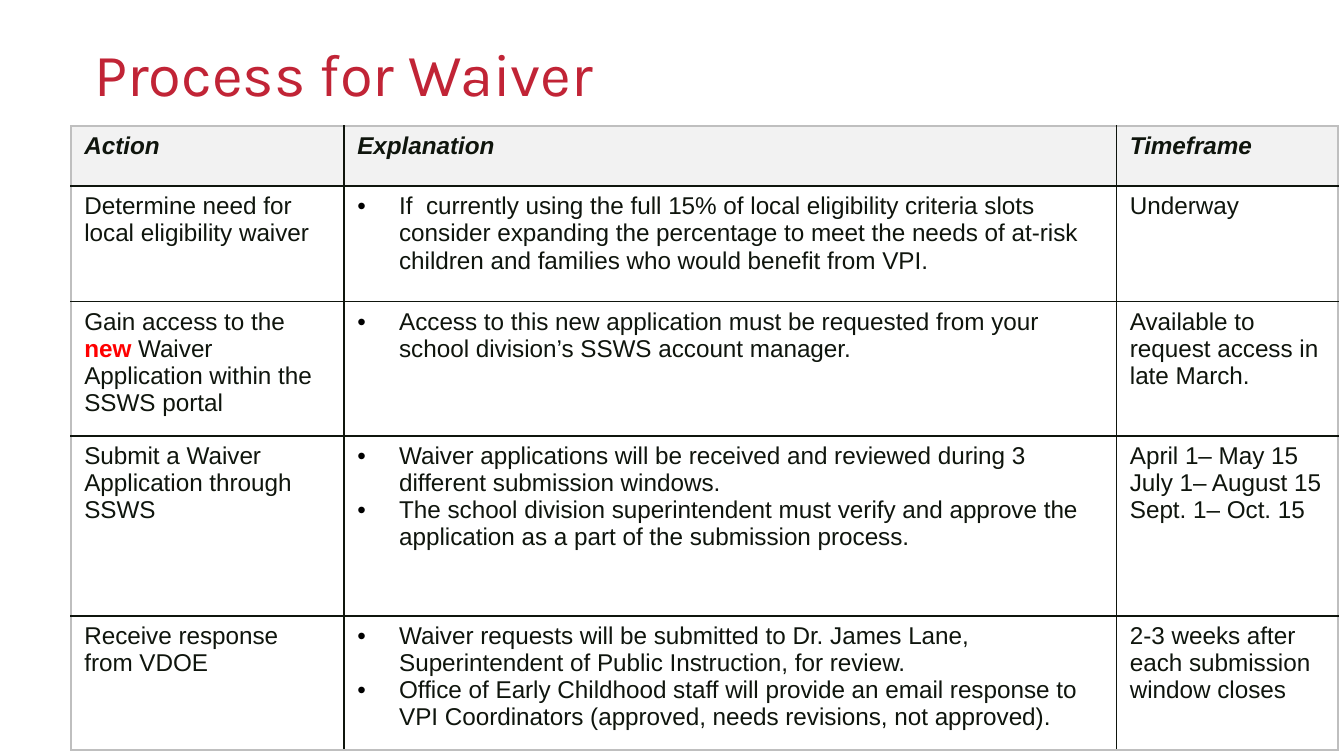
from lxml.etree import SubElement
from pptx import Presentation
from pptx.dml.color import RGBColor
from pptx.enum.text import MSO_ANCHOR, PP_ALIGN
from pptx.oxml.ns import qn
from pptx.util import Cm, Pt

HUES = {"ink": "0F150D", "red": "C12436", "hot": "FF0000", "head": "F2F2F2",
        "white": "FFFFFF", "edge": "BFBFBF", "dot": "000000"}
TITLE = {"name": "Karla", "size": Pt(32), "bold": False}
BODY = {"name": "Arial", "size": Pt(13), "bold": False, "italic": False}
HEAD = {**BODY, "bold": True, "italic": True}
STRONG = {**BODY, "bold": True}

WIDTHS = [5.16, 14.6, 4.19]
HEIGHTS = [1.14, 2.18, 2.54, 3.4, 2.54]
ROWS = [
    (["Action"], ["Explanation"], ["Timeframe"]),
    (["Determine need for local eligibility waiver"],
     ["If  currently using the full 15% of local eligibility criteria slots consider expanding "
      "the percentage to meet the needs of at-risk children and families who would benefit from VPI."],
     ["Underway"]),
    (["Gain access to the *new* Waiver Application within the SSWS portal"],
     ["Access to this new application must be requested from your school division’s SSWS account manager."],
     ["Available to request access in late March."]),
    (["Submit a Waiver Application through SSWS"],
     ["Waiver applications will be received and reviewed during 3 different submission windows.",
      "The school division superintendent must verify and approve the application as a part of "
      "the submission process."],
     ["April 1– May 15", "July 1– August 15", "Sept. 1– Oct. 15"]),
    (["Receive response from VDOE"],
     ["Waiver requests will be submitted to Dr. James Lane, Superintendent of Public Instruction, for review.",
      "Office of Early Childhood staff will provide an email response to VPI Coordinators "
      "(approved, needs revisions, not approved)."],
     ["2-3 weeks after each submission window closes"]),
]


def style(font, look, hue):
    for key, value in look.items():
        setattr(font, key, value)
    font.color.rgb = RGBColor.from_string(HUES[hue])


def add_title(slide, text):
    title = slide.shapes.title
    place = {"left": Cm(1.6), "top": Cm(0.53), "width": Cm(23.8), "height": Cm(1.85)}
    for key, value in place.items():
        setattr(title, key, value)
    frame = title.text_frame
    inset = {"margin_left": Cm(0.18), "margin_right": Cm(0.18), "margin_top": Cm(0.1),
             "margin_bottom": Cm(0.1), "vertical_anchor": MSO_ANCHOR.MIDDLE}
    for key, value in inset.items():
        setattr(frame, key, value)
    frame.text = text
    para = frame.paragraphs[0]
    para.alignment = PP_ALIGN.LEFT
    para.line_spacing = 0.9
    style(para.runs[0].font, TITLE, "red")


def add_dot(para):
    props = para._p.get_or_add_pPr()
    props.set("marL", str(Cm(0.79)))
    props.set("indent", str(-Cm(0.79)))
    tint = SubElement(props, qn("a:buClr"))
    SubElement(tint, qn("a:srgbClr"), val=HUES["dot"])
    SubElement(props, qn("a:buFont"), typeface="Arial")
    SubElement(props, qn("a:buChar"), char="•")


def add_lines(cell, outer):
    props = cell._tc.get_or_add_tcPr()
    for side in ("L", "R", "T", "B"):
        line = SubElement(props, qn(f"a:ln{side}"), w=str(Pt(1)))
        fill = SubElement(line, qn("a:solidFill"))
        SubElement(fill, qn("a:srgbClr"), val=HUES["edge" if side in outer else "ink"])


def fill_cell(cell, lines, look, dots, shade):
    cell.fill.solid()
    cell.fill.fore_color.rgb = RGBColor.from_string(HUES[shade])
    frame = cell.text_frame
    for pos, text in enumerate(lines):
        para = frame.add_paragraph() if pos else frame.paragraphs[0]
        if dots:
            add_dot(para)
        for part, words in enumerate(text.split("*")):
            run = para.add_run()
            run.text = words
            if part % 2:
                style(run.font, STRONG, "hot")
            else:
                style(run.font, look, "ink")


def add_grid(slide):
    shape = slide.shapes.add_table(len(ROWS), len(WIDTHS), Cm(1.34), Cm(2.38),
                                   Cm(sum(WIDTHS)), Cm(sum(HEIGHTS)))
    table = shape.table
    table.first_row = table.horz_banding = False
    for col, width in zip(table.columns, WIDTHS):
        col.width = Cm(width)
    for row, height in zip(table.rows, HEIGHTS):
        row.height = Cm(height)
    for r, row in enumerate(ROWS):
        for c, lines in enumerate(row):
            cell = table.cell(r, c)
            edges = {"L": c == 0, "R": c == len(WIDTHS) - 1,
                     "T": r == 0, "B": r == len(ROWS) - 1}
            add_lines(cell, [side for side, out in edges.items() if out])
            fill_cell(cell, lines, BODY if r else HEAD, r > 0 and c == 1,
                      "white" if r else "head")


def main():
    deck = Presentation()
    deck.slide_width, deck.slide_height = Cm(25.4), Cm(14.29)
    slide = deck.slides.add_slide(deck.slide_layouts[5])
    add_title(slide, "Process for Waiver")
    add_grid(slide)
    deck.save("out.pptx")


if __name__ == "__main__":
    main()
